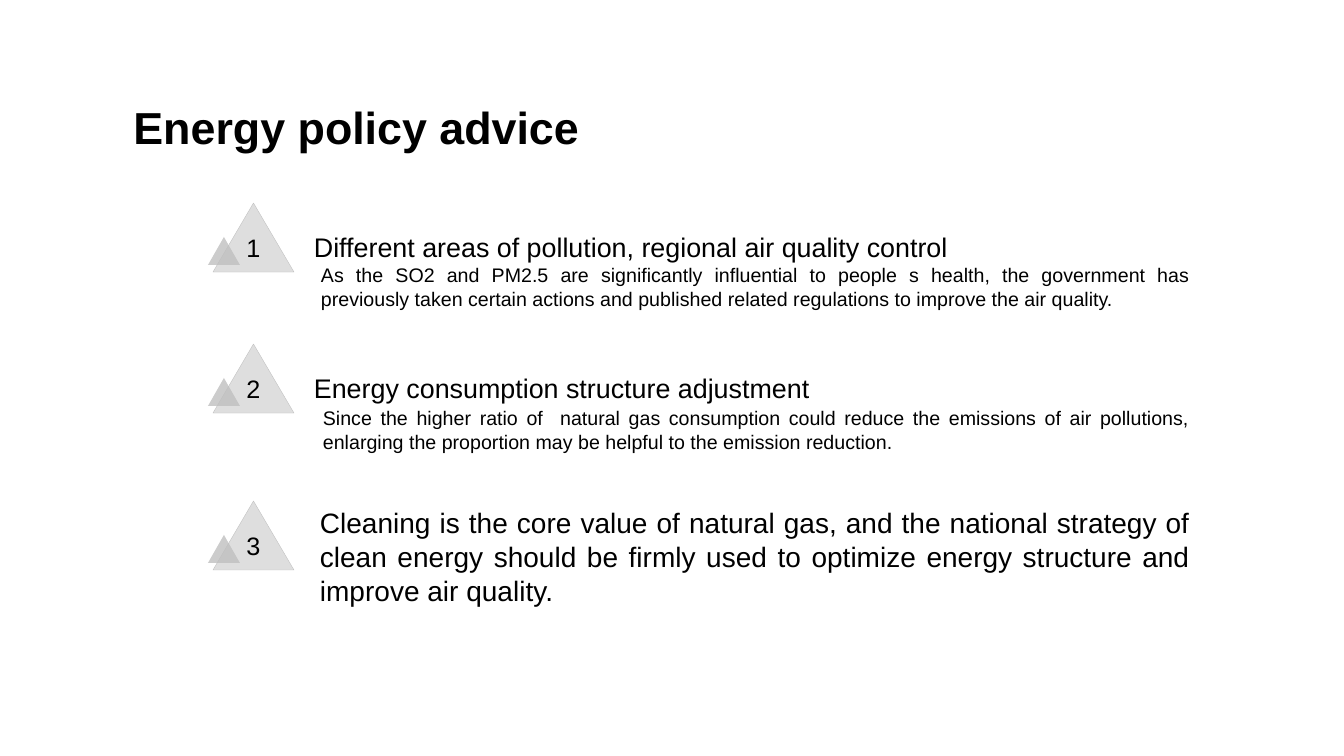
from lxml.etree import SubElement
from pptx import Presentation
from pptx.dml.color import RGBColor
from pptx.enum.shapes import MSO_SHAPE
from pptx.enum.text import MSO_ANCHOR, PP_ALIGN
from pptx.oxml.ns import qn
from pptx.util import Emu, Pt

TITLE = "Energy policy advice"
# marker top, heading, detail text, detail left, detail top, detail height, detail size
ADVICE = [
    (203, "Different areas of pollution, regional air quality control",
     "As the SO2 and PM2.5 are significantly influential to people s health, "
     "the government has previously taken certain actions and published "
     "related regulations to improve the air quality.", 311, 258, 57, 14),
    (344, "Energy consumption structure adjustment",
     "Since the higher ratio of  natural gas consumption could reduce the "
     "emissions of air pollutions, enlarging the proportion may be helpful "
     "to the emission reduction.", 313, 401, 57, 14),
    (501, None,
     "Cleaning is the core value of natural gas, and the national strategy "
     "of clean energy should be firmly used to optimize energy structure and "
     "improve air quality.", 310, 501, 112, 20),
]

BLACK = RGBColor(0x00, 0x00, 0x00)
GREY = RGBColor(0xBF, 0xBF, 0xBF)
FONT = "Arial"
PX_PER_INCH = 100.8
DETAIL_RIGHT = 1200
HEADING_LEFT, HEADING_WIDTH, HEADING_HEIGHT = 304, 670, 43


def px(length):
    return Emu(round(length * 914400 / PX_PER_INCH))


def write(shape, text, size, align, bold=False):
    paragraph = shape.text_frame.paragraphs[0]
    paragraph.text = text
    paragraph.alignment = align
    font = paragraph.runs[0].font
    font.name, font.size, font.bold = FONT, Pt(size), bold
    font.color.rgb = BLACK


def add_text(box, text, size, align, bold=False):
    label = slide.shapes.add_textbox(*map(px, box))
    label.text_frame.word_wrap = True
    write(label, text, size, align, bold)


def add_triangle(box, opacity):
    """Add a grey triangle without outline; opacity is in percent."""
    triangle = slide.shapes.add_shape(MSO_SHAPE.ISOSCELES_TRIANGLE, *map(px, box))
    triangle.shadow.inherit = False
    triangle.fill.solid()
    triangle.fill.fore_color.rgb = GREY
    color = triangle.fill._xPr.find(qn("a:solidFill"))[0]
    SubElement(color, qn("a:alpha")).set("val", str(opacity * 1000))
    triangle.line.fill.background()
    return triangle


def add_marker(number, top):
    large = add_triangle((213, top, 81, 69), 50)
    large.line.color.rgb = GREY
    large.line.width = Pt(0.25)
    frame = large.text_frame
    frame.vertical_anchor = MSO_ANCHOR.MIDDLE
    frame.margin_left = frame.margin_right = px(10)
    frame.margin_top, frame.margin_bottom = px(5), px(20)
    write(large, str(number), 18, PP_ALIGN.CENTER)
    add_triangle((208, top + 34, 32, 28), 79)


presentation = Presentation()
presentation.slide_width, presentation.slide_height = px(1344), px(756)
slide = presentation.slides.add_slide(presentation.slide_layouts[6])

add_text((95, 95, 523, 57), TITLE, 32, PP_ALIGN.CENTER, bold=True)
for number, (top, heading, detail, left, detail_top, height, size) in enumerate(ADVICE, 1):
    add_marker(number, top)
    if heading:
        add_text((HEADING_LEFT, top + 23, HEADING_WIDTH, HEADING_HEIGHT),
                 heading, 19.2, PP_ALIGN.LEFT)
    add_text((left, detail_top, DETAIL_RIGHT - left, height), detail, size, PP_ALIGN.JUSTIFY)

presentation.save("out.pptx")
